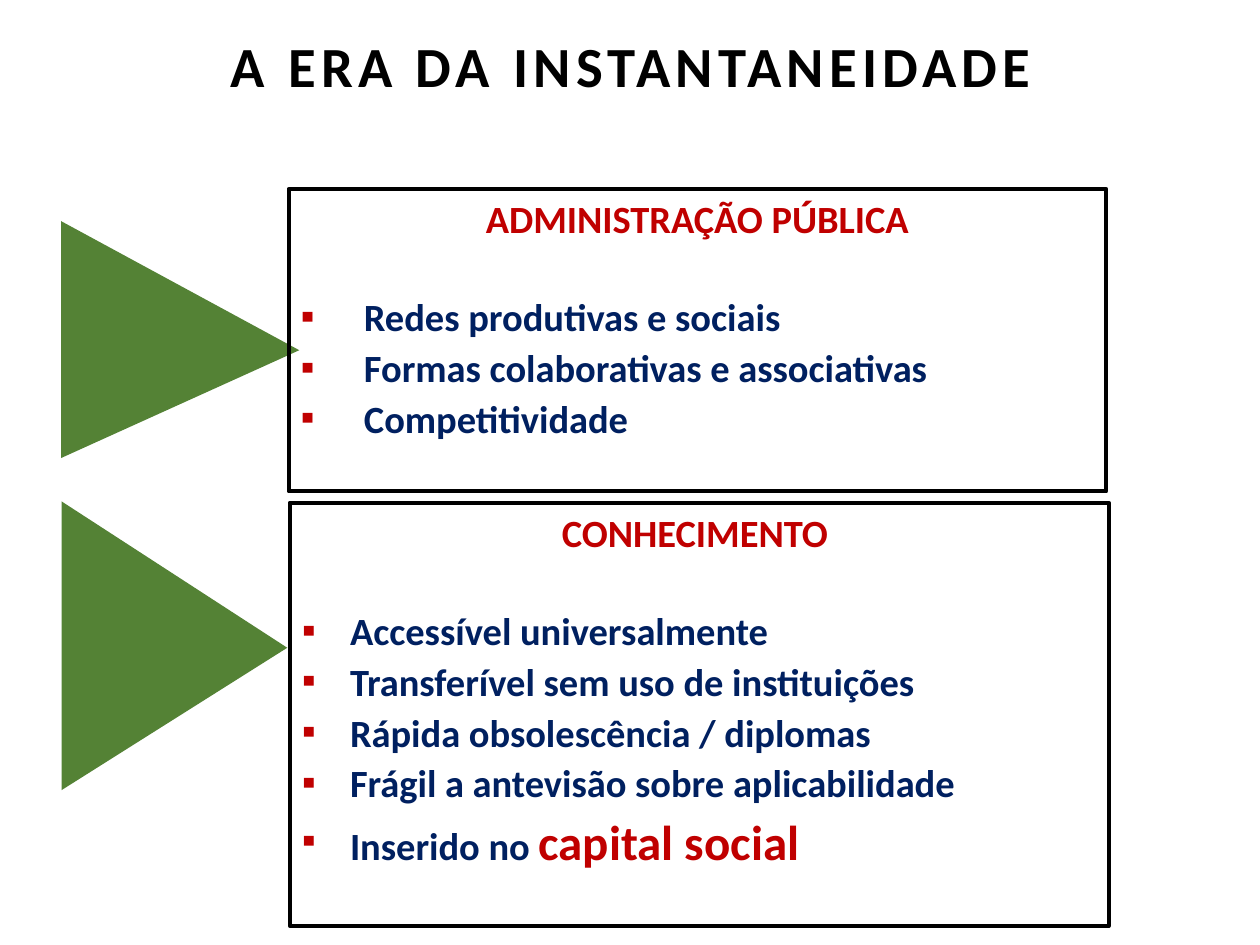
"""Build the slide on the age of instantaneity: two boxed lists, each with a triangle pointing at it."""
from lxml import etree
from pptx import Presentation
from pptx.dml.color import RGBColor
from pptx.enum import shapes, text
from pptx.oxml.ns import qn
from pptx.util import Inches, Pt

COLORS = {"title": "000000", "border": "000000", "accent": "C00000", "body": "002060", "triangle": "548235"}


def add_run(p, words, size, color):
    r = p.add_run()
    r.text = words
    r.font.name = "Calibri"
    r.font.size = Pt(size)
    r.font.bold = True
    r.font.color.rgb = RGBColor.from_string(COLORS[color])
    return r


def add_bullet(p, indent):
    p.line_spacing = 1.1
    pPr = p._p.get_or_add_pPr()
    pPr.set("marL", str(Inches(indent)))
    pPr.set("indent", str(-Inches(indent)))
    clr = etree.SubElement(pPr, qn("a:buClr"))
    etree.SubElement(clr, qn("a:srgbClr"), val=COLORS["accent"])
    etree.SubElement(pPr, qn("a:buFont"), typeface="Calibri")
    etree.SubElement(pPr, qn("a:buChar"), char="▪")


prs = Presentation()
prs.slide_width, prs.slide_height = Inches(10), Inches(7.5)
s = prs.slides.add_slide(prs.slide_layouts[5])

title = s.shapes.title
title.left, title.top, title.width, title.height = map(Inches, (0.14, 0.11, 9.74, 0.88))
tf = title.text_frame
tf.word_wrap = True
tf.auto_size = text.MSO_AUTO_SIZE.NONE
tf.vertical_anchor = text.MSO_ANCHOR.MIDDLE
p = tf.paragraphs[0]
p.alignment = text.PP_ALIGN.CENTER
p.line_spacing = 0.9
r = add_run(p, "A ERA DA INSTANTANEIDADE", 32.4, "title")
r._r.get_or_add_rPr().set("spc", "300")

triangles = [((0.49, 1.75, 1.88, 1.89), 0.545), ((0.24, 4.23, 2.29, 1.79), 0.507)]
for place, tip in triangles:
    sp = s.shapes.add_shape(shapes.MSO_SHAPE.ISOSCELES_TRIANGLE, *map(Inches, place))
    sp.adjustments[0] = tip
    sp.rotation = 90
    sp.shadow.inherit = False
    sp.fill.solid()
    sp.fill.fore_color.rgb = RGBColor.from_string(COLORS["triangle"])
    sp.line.fill.background()

boxes = [
    ((2.29, 1.5, 6.49, 2.4), "ADMINISTRAÇÃO PÚBLICA", 0.5, [
        [("Redes produtivas e sociais", 22, "body")],
        [("Formas colaborativas e associativas", 22, "body")],
        [("Competitividade", 22, "body")],
    ]),
    ((2.3, 3.99, 6.5, 3.36), "CONHECIMENTO ", 0.38, [
        [("Accessível universalmente", 22, "body")],
        [("Transferível sem uso de instituições", 22, "body")],
        [("Rápida obsolescência / diplomas", 22, "body")],
        [("Frágil a antevisão sobre aplicabilidade", 22, "body")],
        [("Inserido no ", 22, "body"), ("capital social", 28, "accent")],
    ]),
]
for place, heading, indent, items in boxes:
    sp = s.shapes.add_shape(shapes.MSO_SHAPE.RECTANGLE, *map(Inches, place))
    sp.shadow.inherit = False
    sp.fill.background()
    sp.line.color.rgb = RGBColor.from_string(COLORS["border"])
    sp.line.width = Pt(2.25)
    tf = sp.text_frame
    tf.word_wrap = True
    tf.vertical_anchor = text.MSO_ANCHOR.TOP
    p = tf.paragraphs[0]
    p.alignment = text.PP_ALIGN.CENTER
    p.space_after = Pt(27)
    add_run(p, heading, 22, "accent")
    for item in items:
        p = tf.add_paragraph()
        p.alignment = text.PP_ALIGN.LEFT
        add_bullet(p, indent)
        for words, size, color in item:
            add_run(p, words, size, color)

prs.save("out.pptx")
